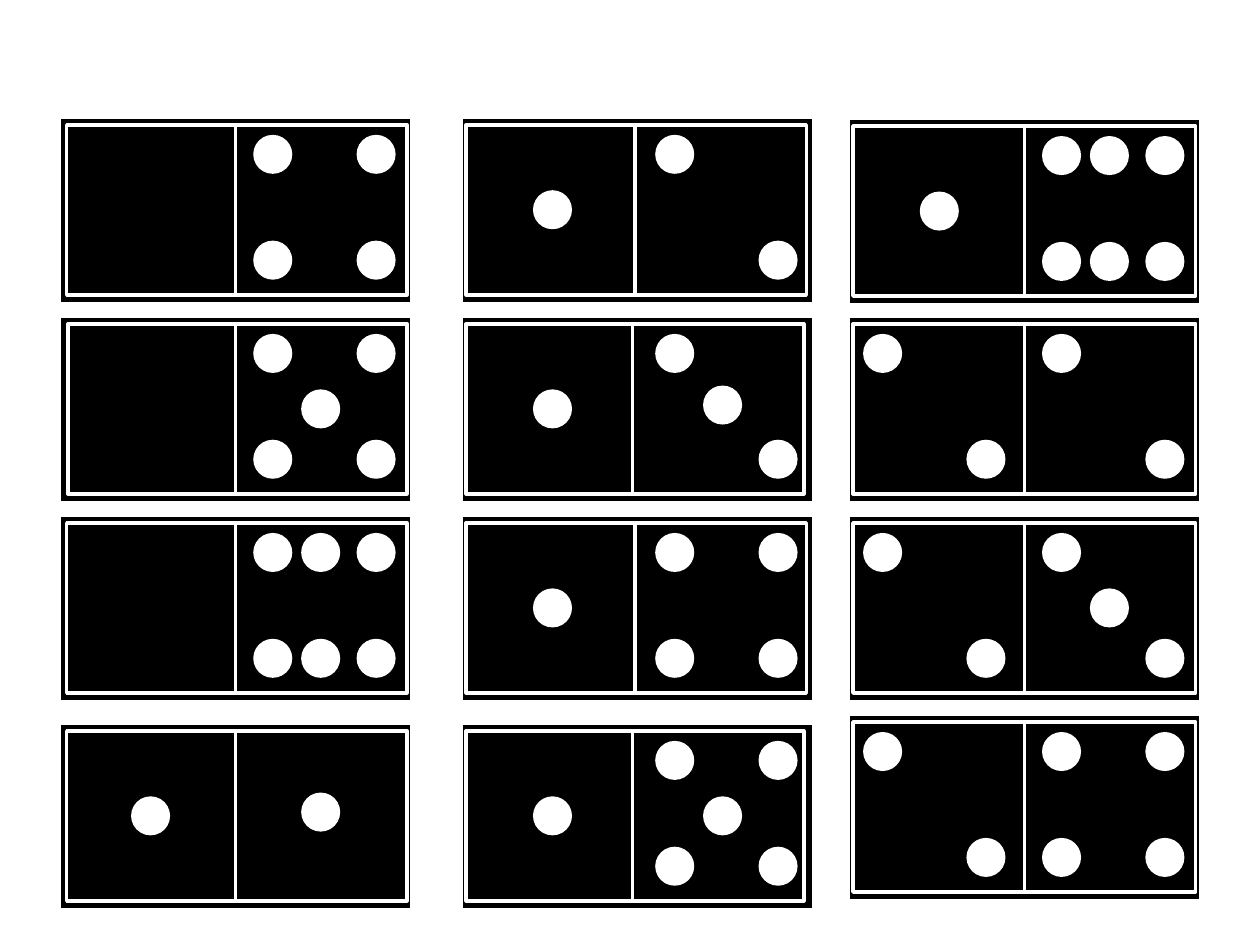
from dataclasses import dataclass

from pptx import Presentation
from pptx.dml.color import RGBColor
from pptx.enum.shapes import MSO_SHAPE as Shape
from pptx.util import Inches, Pt

COLORS = {"tile": "000000", "pip": "FFFFFF", "border": "FFFFFF"}
LONG, SHORT, HALF, PIP = 2.8, 1.48, 1.36, 0.31
HALF_TOP = 0.06
PIP_COLUMNS = ((0.12, 0.57, 0.94), (1.54, 1.92, 2.36))
PIP_ROWS = (0.14, 0.58, 0.98)
TOPS = (0.93, 2.51, 4.09, 5.74)
CORNERS = ((0, 0), (2, 2), (0, 2), (2, 0))
PIPS = {
    0: (),
    1: ((1, 1),),
    2: CORNERS[:2],
    3: CORNERS[:2] + ((1, 1),),
    4: CORNERS,
    5: CORNERS + ((1, 1),),
    6: CORNERS + ((1, 0), (1, 2)),
}


@dataclass
class Domino:
    """Position, values and small offsets of one domino."""
    left: float
    top: float
    values: tuple
    insets: tuple
    center_lift: float = 0


DOMINOES = (
    Domino(6.73, 5.67, (2, 4), (0.04, 1.4)),
    Domino(6.73, TOPS[2], (2, 3), (0.04, 1.4)),
    Domino(6.73, TOPS[1], (2, 2), (0.04, 1.4)),
    Domino(6.73, 0.94, (1, 6), (0.04, 1.4)),
    Domino(3.66, TOPS[3], (1, 5), (0.04, 1.36)),
    Domino(3.66, TOPS[2], (1, 4), (0.04, 1.38)),
    Domino(3.66, TOPS[1], (1, 3), (0.04, 1.36), 0.03),
    Domino(3.66, TOPS[0], (1, 2), (0.04, 1.38)),
    Domino(0.47, TOPS[3], (1, 1), (0.06, 1.4), 0.03),
    Domino(0.47, TOPS[2], (0, 6), (0.06, 1.4)),
    Domino(0.47, TOPS[1], (0, 5), (0.07, 1.4)),
    Domino(0.47, TOPS[0], (0, 4), (0.06, 1.4)),
)


def add_filled(group, kind, box, color, border=None):
    """Add a flat filled shape, with a border if a colour is given."""
    shape = group.shapes.add_shape(kind, *map(Inches, box))
    shape.shadow.inherit = False
    shape.fill.solid()
    shape.fill.fore_color.rgb = RGBColor.from_string(COLORS[color])
    if border:
        shape.line.color.rgb = RGBColor.from_string(COLORS[border])
        shape.line.width = Pt(2)
    else:
        shape.line.fill.background()
    return shape


def add_body(group, domino):
    """Add the upright tile turned on its side and its two halves."""
    shift = (LONG - SHORT) / 2
    box = (domino.left + shift, domino.top - shift, SHORT, LONG)
    body = add_filled(group, Shape.RECTANGLE, box, "tile", "border")
    body.rotation = 270
    for inset in domino.insets:
        box = (domino.left + inset, domino.top + HALF_TOP, HALF, HALF - 0.01)
        add_filled(group, Shape.RECTANGLE, box, "tile", "border")


def add_pips(group, domino):
    """Add the pips of both halves."""
    for side, value in enumerate(domino.values):
        for column, row in PIPS[value]:
            lift = domino.center_lift if side and row == 1 else 0
            left = domino.left + PIP_COLUMNS[side][column]
            top = domino.top + PIP_ROWS[row] - lift
            add_filled(group, Shape.OVAL, (left, top, PIP, PIP), "pip")


def main():
    """Build the slide of dominoes."""
    deck = Presentation()
    deck.slide_width, deck.slide_height = Inches(10), Inches(7.5)
    page = deck.slides.add_slide(deck.slide_layouts[6])
    for domino in DOMINOES:
        group = page.shapes.add_group_shape()
        add_body(group, domino)
        add_pips(group, domino)
    deck.save("out.pptx")


if __name__ == "__main__":
    main()
